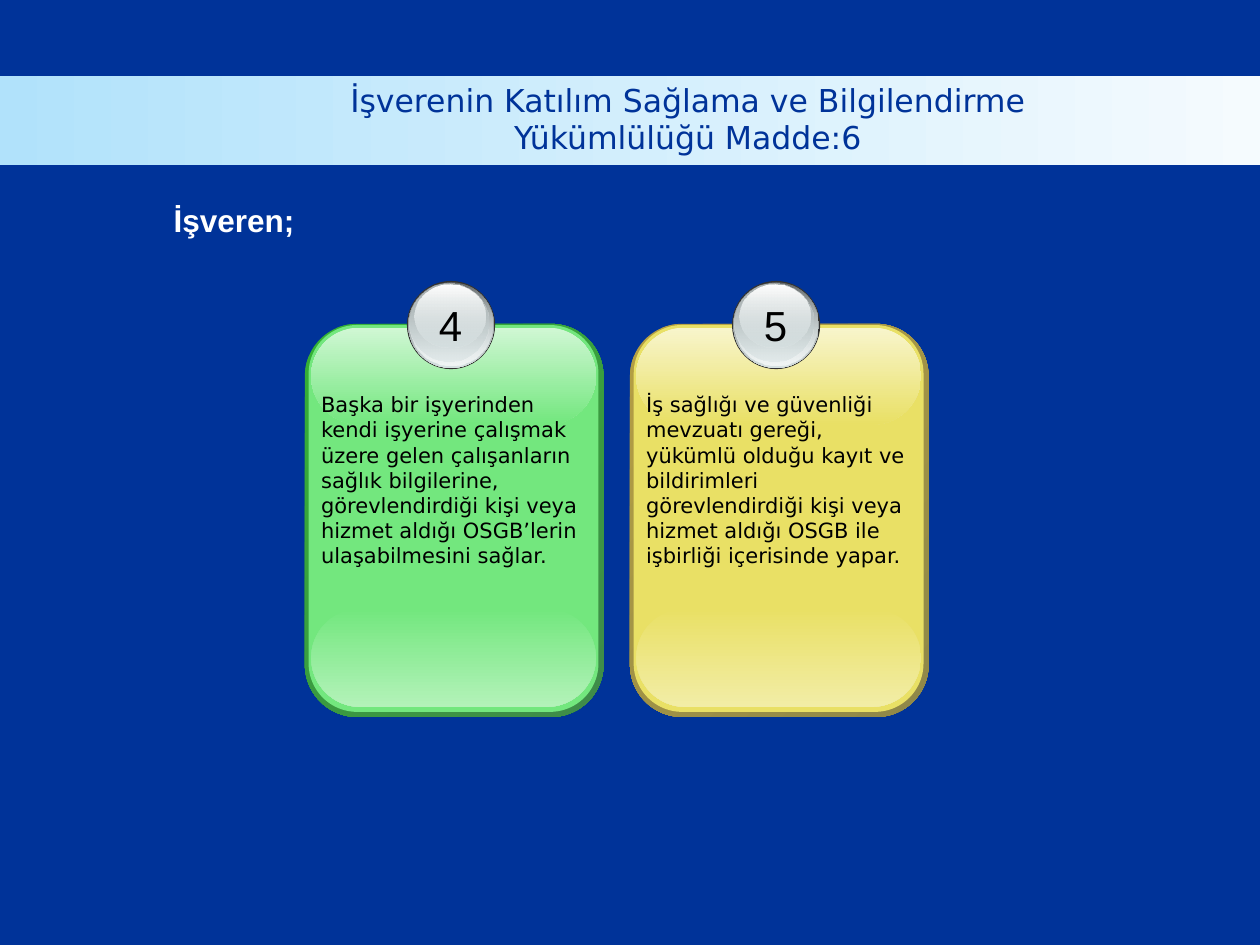
from pptx import Presentation
from pptx.dml.color import RGBColor
from pptx.enum.shapes import MSO_SHAPE
from pptx.enum.text import MSO_ANCHOR, MSO_AUTO_SIZE, PP_ALIGN
from pptx.oxml.ns import qn
from pptx.util import Inches, Pt
from lxml import etree

RECT, ROUND, OVAL = MSO_SHAPE.RECTANGLE, MSO_SHAPE.ROUNDED_RECTANGLE, MSO_SHAPE.OVAL
CENTER, LEFT, MIDDLE = PP_ALIGN.CENTER, PP_ALIGN.LEFT, MSO_ANCHOR.MIDDLE
FIT, NO_FIT = MSO_AUTO_SIZE.SHAPE_TO_FIT_TEXT, MSO_AUTO_SIZE.NONE

COLORS = {
    "navy": "003399", "white": "FFFFFF", "black": "000000",
    "band_left": "B1E2FB", "band_right": "F5FBFE",
    "rim": "333333", "steel": "636869", "silver": "D6E1E2",
    "pale": "F1F5F5", "gray": "AAB2B3",
}
GREEN = {"edge": ("34B034", "3F8B4A"), "face": "73E77E", "low": "B3F2B9", "high": "D0F7D4"}
YELLOW = {"edge": ("B59F43", "8F8849"), "face": "E9E065", "low": "F2EDA6", "high": "F8F5CC"}

# Badge discs from back to front: offset from card left, top, width, height,
# colours from top to bottom, opacity in percent of each colour
DISCS = [
    (0.81, 2.23, 0.70, 0.70, ["rim"], (100,)),
    (0.82, 2.24, 0.68, 0.68, ["steel", "silver"], (100, 100)),
    (0.83, 2.24, 0.66, 0.66, ["silver", "pale"], (0, 100)),
    (0.83, 2.25, 0.63, 0.62, ["gray", "silver"], (100, 48)),
    (0.87, 2.26, 0.56, 0.50, ["white", "silver"], (100, 38)),
]
CARDS = [
    ("4", GREEN, "Başka bir işyerinden kendi işyerine çalışmak üzere gelen çalışanların "
     "sağlık bilgilerine, görevlendirdiği kişi veya hizmet aldığı OSGB’lerin "
     "ulaşabilmesini sağlar."),
    ("5", YELLOW, "İş sağlığı ve güvenliği mevzuatı gereği, yükümlü olduğu kayıt ve "
     "bildirimleri görevlendirdiği kişi veya hizmet aldığı OSGB ile işbirliği "
     "içerisinde yapar."),
]
CARD_LEFT, CARD_PITCH = 2.42, 2.58


class SlideBuilder:
    head_font, body_font = "Arial", "DejaVu Sans"

    def __init__(self, slide):
        self.s = slide

    def background(self, color):
        fill = self.s.background.fill
        fill.solid()
        fill.fore_color.rgb = RGBColor.from_string(color)

    def shape(self, shapes, kind, box, colors, angle=90, alphas=(100, 100), adj=None):
        """Add a borderless shape; two colours make a gradient, angle clockwise."""
        sp = shapes.add_shape(kind, *map(Inches, box))
        sp.shadow.inherit = False
        sp.line.fill.background()
        if adj is not None:
            sp.adjustments[0] = adj
        if len(colors) == 1:
            sp.fill.solid()
            sp.fill.fore_color.rgb = RGBColor.from_string(colors[0])
            return
        sp.fill.gradient()
        sp.fill.gradient_angle = (360 - angle) % 360
        for stop, color in zip(sp.fill.gradient_stops, colors):
            stop.color.rgb = RGBColor.from_string(color)
        for clr, alpha in zip(sp._element.spPr.iter(qn("a:srgbClr")), alphas):
            if alpha < 100:
                etree.SubElement(clr, qn("a:alpha")).set("val", str(alpha * 1000))

    def set_text(self, sp, text, size, font, color, bold=False, align=LEFT, wrap=True, fit=FIT):
        tf = sp.text_frame
        tf.word_wrap = wrap
        tf.auto_size = fit
        p = tf.paragraphs[0]
        p.text = text
        p.alignment = align
        p.font.size, p.font.name, p.font.bold = Pt(size), font, bold
        p.font.color.rgb = RGBColor.from_string(color)

    def text(self, shapes, box, *args, **kwargs):
        self.set_text(shapes.add_textbox(*map(Inches, box)), *args, **kwargs)

    def title(self, box, text):
        sp = self.s.shapes.title
        sp.left, sp.top, sp.width, sp.height = map(Inches, box)
        sp.text_frame.vertical_anchor = MIDDLE
        self.set_text(sp, text, 18, self.body_font, COLORS["navy"], align=CENTER, fit=NO_FIT)

    def card(self, x, number, tone):
        shapes = self.s.shapes.add_group_shape().shapes
        face = tone["face"]
        # Panel with its lower and upper gloss
        self.shape(shapes, ROUND, (x, 2.57, 2.37, 3.12), tone["edge"], 45, adj=0.175)
        self.shape(shapes, ROUND, (x + 0.03, 2.58, 2.3, 3.07), [face], adj=0.167)
        self.shape(shapes, ROUND, (x + 0.05, 4.83, 2.26, 0.78), [face, tone["low"]], adj=0.5)
        self.shape(shapes, ROUND, (x + 0.05, 2.6, 2.26, 0.77), [tone["high"], face], adj=0.5)
        # Numbered badge
        for dx, top, width, height, names, alphas in DISCS:
            self.shape(shapes, OVAL, (x + dx, top, width, height),
                       [COLORS[n] for n in names], alphas=alphas)
        self.text(shapes, (x + 0.96, 2.33, 0.39, 0.51), number, 24, self.head_font,
                  COLORS["black"], align=CENTER, wrap=False)


def main():
    prs = Presentation()
    prs.slide_width, prs.slide_height = Inches(10), Inches(7.5)
    s = prs.slides.add_slide(prs.slide_layouts[5])
    b = SlideBuilder(s)
    b.background(COLORS["navy"])

    # Title on its band
    b.shape(s.shapes, RECT, (0, 0.6, 10, 0.71),
            [COLORS["band_left"], COLORS["band_right"]], angle=0)
    b.title((2.17, 0.63, 6.58, 0.62),
            "İşverenin Katılım Sağlama ve Bilgilendirme Yükümlülüğü Madde:6")
    s.shapes._spTree.append(s.shapes.title._element)  # bring in front of the band

    # Lead-in
    b.text(s.shapes, (1.28, 1.55, 1.77, 0.4), "İşveren;", 18, b.head_font,
           COLORS["white"], bold=True)

    # Numbered cards
    for i, (number, tone, body) in enumerate(CARDS):
        x = CARD_LEFT + i * CARD_PITCH
        b.card(x, number, tone)
        b.text(s.shapes, (x + 0.03, 3.06, 2.25, 1.51), body, 12, b.body_font, COLORS["black"])

    prs.save("out.pptx")


if __name__ == "__main__":
    main()
